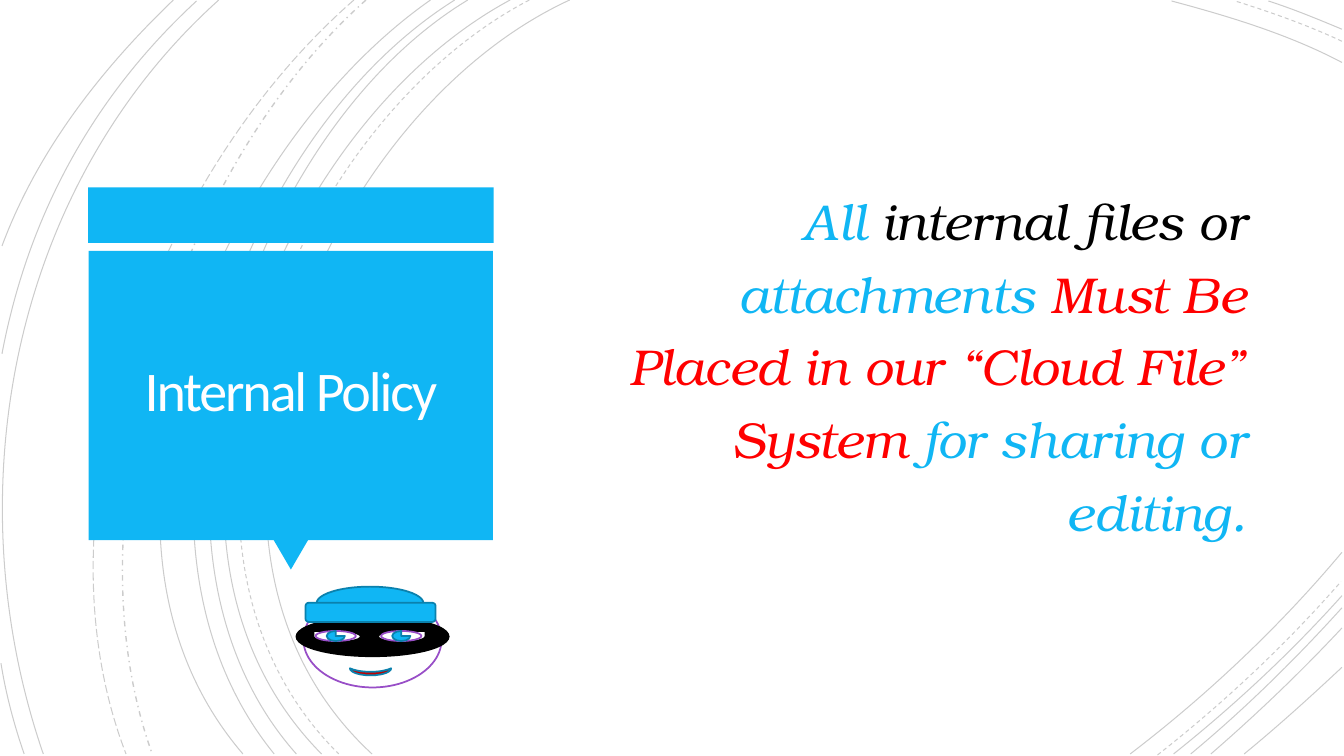
from dataclasses import dataclass
from typing import Optional

from pptx import Presentation
from pptx.dml.color import RGBColor
from pptx.enum.dml import MSO_LINE
from pptx.enum.shapes import MSO_SHAPE
from pptx.enum.text import MSO_ANCHOR, PP_ALIGN
from pptx.oxml.ns import qn
from pptx.oxml.xmlchemy import OxmlElement
from pptx.shapes.autoshape import Shape
from pptx.shapes.shapetree import GroupShapes
from pptx.slide import Slide
from pptx.text.text import _Run
from pptx.util import Inches, Pt

RECTANGLE = MSO_SHAPE.RECTANGLE
ROUNDED = MSO_SHAPE.ROUNDED_RECTANGLE
TRIANGLE = MSO_SHAPE.ISOSCELES_TRIANGLE
OVAL = MSO_SHAPE.OVAL
TEAR = MSO_SHAPE.TEAR
MOON = MSO_SHAPE.MOON
PIE = MSO_SHAPE.PIE
SOLID = MSO_LINE.SOLID
DASH = MSO_LINE.DASH
DASH_DOT = MSO_LINE.DASH_DOT
LONG_DASH = MSO_LINE.LONG_DASH
MIDDLE = MSO_ANCHOR.MIDDLE
CENTER = PP_ALIGN.CENTER
RIGHT = PP_ALIGN.RIGHT

SLIDE_WIDTH = Inches(13.33)
SLIDE_HEIGHT = Inches(7.5)
COLUMN = SLIDE_WIDTH / 13.33
ROW = SLIDE_HEIGHT / 7.5

Point = tuple[float, float]


@dataclass(frozen=True)
class Theme:
    blue: str = "10B6F4"
    deep_blue: str = "0B81AD"
    purple: str = "984EC7"
    red: str = "FF0000"
    dark_red: str = "C00000"
    black: str = "000000"
    white: str = "FFFFFF"
    title_color: str = "FFFEFF"
    title_font: str = "Calibri"
    body_font: str = "TeX Gyre Bonum"
    title_size: float = 40
    body_size: float = 36
    face_line: float = 1.25
    arc_opacity: int = 20


THEME = Theme()


@dataclass(frozen=True)
class Box:
    column: float
    row: float
    columns: float
    rows: float

    def emu(self) -> tuple[int, int, int, int]:
        return (round(self.column * COLUMN), round(self.row * ROW),
                round(self.columns * COLUMN), round(self.rows * ROW))


@dataclass(frozen=True)
class Arc:
    start: Point
    first_control: Point
    second_control: Point
    end: Point
    dash: MSO_LINE = SOLID
    weight: float = 0.75

    def points(self) -> list[Point]:
        return [(column * COLUMN, row * ROW) for column, row in
                (self.start, self.first_control, self.second_control, self.end)]


@dataclass(frozen=True)
class Part:
    kind: MSO_SHAPE
    box: Box
    fill: str
    line: Optional[str] = None
    rotation: float = 0
    mirrored: bool = False


@dataclass(frozen=True)
class Phrase:
    text: str
    color: str


ARCS = (
    Arc((5.65, 0), (3.15, 1.15), (1.43, 5.4), (3.69, 7.48)),
    Arc((13.31, 0.62), (12.78, 0.34), (12.18, 0.16), (11.62, 0.01)),
    Arc((11.21, 7.48), (11.97, 6.9), (12.69, 6.22), (13.31, 5.48)),
    Arc((5.25, 0), (2.85, 1.25), (1.23, 5.37), (3.36, 7.48), DASH),
    Arc((13.31, 0.41), (12.97, 0.25), (12.6, 0.12), (12.25, 0.01), DASH),
    Arc((11.48, 7.49), (12.13, 6.98), (12.75, 6.4), (13.3, 5.77), DASH),
    Arc((5.06, 0), (2.7, 1.27), (1.1, 5.37), (3.19, 7.48)),
    Arc((13.31, 0.29), (13.07, 0.19), (12.83, 0.09), (12.58, 0.01)),
    Arc((11.64, 7.48), (12.23, 7.01), (12.8, 6.48), (13.31, 5.91)),
    Arc((4.64, 0), (2.44, 1.33), (1.1, 5.41), (2.94, 7.48)),
    Arc((11.81, 7.48), (12.34, 7.04), (12.84, 6.55), (13.31, 6.03)),
    Arc((4.51, 0), (2.31, 1.38), (0.97, 5.33), (2.72, 7.48)),
    Arc((12.01, 7.48), (12.46, 7.09), (12.9, 6.67), (13.31, 6.23)),
    Arc((4.27, 0), (2.17, 1.47), (0.53, 5.29), (2.41, 7.48)),
    Arc((12.34, 7.48), (12.67, 7.21), (12.99, 6.92), (13.31, 6.62)),
    Arc((3.63, 0), (1.76, 1.66), (0.65, 5.09), (1.51, 7.48), DASH_DOT, 1),
    Arc((3.51, 0), (1.57, 1.69), (0.29, 4.99), (1.25, 7.48), LONG_DASH),
    Arc((2.17, 0), (0.11, 1.85), (-0.46, 4.9), (0.43, 7.48)),
    Arc((1.95, 0.01), (0.92, 0.96), (0.28, 2.14), (0.02, 3.51)),
    Arc((0.01, 6.58), (0.06, 6.89), (0.14, 7.19), (0.24, 7.48)),
    Arc((1.72, 0), (1, 0.69), (0.37, 1.5), (0.02, 2.44)),
)

CALLOUT = (
    Part(RECTANGLE, Box(0.875, 1.86, 4.02, 0.55), THEME.blue),
    Part(TRIANGLE, Box(2.71, 5.35, 0.35, 0.3), THEME.blue, rotation=180),
    Part(RECTANGLE, Box(0.88, 2.49, 4.01, 2.87), THEME.blue),
)

HEAD = (
    Part(OVAL, Box(3.01, 5.87, 1.37, 0.95), THEME.white, THEME.purple),
    Part(OVAL, Box(2.94, 6.12, 1.51, 0.39), THEME.black, THEME.black),
    Part(TEAR, Box(3.75, 6.26, 0.47, 0.11), THEME.white, THEME.black),
    Part(TEAR, Box(3.11, 6.26, 0.47, 0.11), THEME.white, THEME.black, mirrored=True),
    Part(OVAL, Box(3.14, 5.82, 1.06, 0.33), THEME.blue, THEME.deep_blue),
    Part(ROUNDED, Box(3.03, 5.98, 1.29, 0.19), THEME.blue, THEME.deep_blue),
    Part(MOON, Box(3.64, 6.46, 0.07, 0.41), THEME.dark_red, THEME.deep_blue, rotation=270),
)

EYES = tuple(
    part
    for left in (3.13, 3.78)
    for part in (
        Part(OVAL, Box(left, 6.26, 0.4, 0.1), THEME.white, THEME.purple),
        Part(PIE, Box(left + 0.11, 6.26, 0.18, 0.1), THEME.blue, THEME.deep_blue),
    )
)

TITLE = (Phrase("Internal Policy", THEME.title_color),)
POLICY = (
    Phrase("All ", THEME.blue),
    Phrase("internal files or ", THEME.black),
    Phrase("attachments ", THEME.blue),
    Phrase("Must Be Placed in our “Cloud File” System", THEME.red),
    Phrase(" for sharing or editing.", THEME.blue),
)


def draw_arc(shapes: GroupShapes, arc: Arc) -> None:
    start, *others = arc.points()
    builder = shapes.build_freeform(*start)
    builder.add_line_segments(others, close=False)
    shape = builder.convert_to_shape()
    curve = OxmlElement("a:cubicBezTo")
    outline = shape._element.spPr.find(f".//{qn('a:path')}")
    for segment in outline.findall(qn("a:lnTo")):
        curve.append(segment[0])
        outline.remove(segment)
    outline.append(curve)
    shape.shadow.inherit = False
    shape.fill.background()
    shape.line.color.rgb = RGBColor.from_string(THEME.black)
    shape.line.width = Pt(arc.weight)
    shape.line.dash_style = arc.dash
    alpha = OxmlElement("a:alpha")
    alpha.set("val", str(THEME.arc_opacity * 1000))
    shape.line._ln.find(f".//{qn('a:srgbClr')}").append(alpha)


def draw_part(shapes: GroupShapes, part: Part) -> None:
    shape: Shape = shapes.add_shape(part.kind, *part.box.emu())
    shape.shadow.inherit = False
    shape.rotation = part.rotation
    shape.fill.solid()
    shape.fill.fore_color.rgb = RGBColor.from_string(part.fill)
    if part.line:
        shape.line.color.rgb = RGBColor.from_string(part.line)
        shape.line.width = Pt(THEME.face_line)
    else:
        shape.line.fill.background()
    if part.mirrored:
        shape._element.spPr.find(qn("a:xfrm")).set("flipH", "1")


def draw_text(slide: Slide, box: Box, phrases: tuple[Phrase, ...], font: str, size: float,
              alignment: PP_ALIGN, spacing: float, bottom: float) -> list[_Run]:
    text_frame = slide.shapes.add_textbox(*box.emu()).text_frame
    text_frame.word_wrap = True
    text_frame.vertical_anchor = MIDDLE
    text_frame.margin_bottom = round(bottom * ROW)
    paragraph = text_frame.paragraphs[0]
    paragraph.alignment = alignment
    paragraph.line_spacing = spacing
    for phrase in phrases:
        run = paragraph.add_run()
        run.text = phrase.text
        run.font.name = font
        run.font.size = Pt(size)
        run.font.color.rgb = RGBColor.from_string(phrase.color)
    return list(paragraph.runs)


def main() -> None:
    presentation = Presentation()
    presentation.slide_width = SLIDE_WIDTH
    presentation.slide_height = SLIDE_HEIGHT
    slide = presentation.slides.add_slide(presentation.slide_layouts[6])
    arcs = slide.shapes.add_group_shape().shapes
    for arc in ARCS:
        draw_arc(arcs, arc)
    for parts in (CALLOUT, HEAD + EYES):
        group = slide.shapes.add_group_shape().shapes
        for part in parts:
            draw_part(group, part)
    for run in draw_text(slide, Box(0.97, 2.57, 3.83, 2.69), TITLE, THEME.title_font,
                         THEME.title_size, CENTER, 0.85, 0.05):
        run._r.get_or_add_rPr().set("spc", "-150")
    for run in draw_text(slide, Box(5.59, 0.88, 6.87, 5.74), POLICY, THEME.body_font,
                         THEME.body_size, RIGHT, 1.2, 0.41):
        run.font.italic = True
    presentation.save("out.pptx")


if __name__ == "__main__":
    main()
